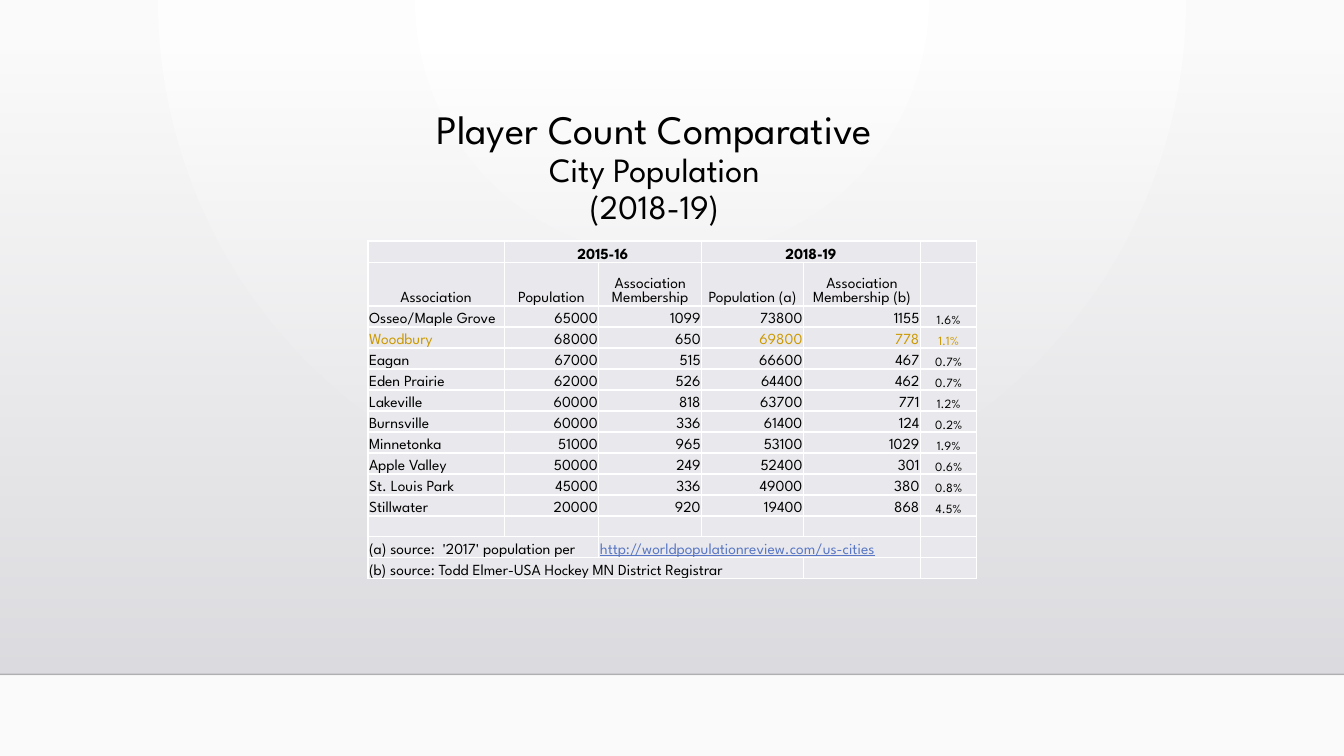
from lxml import etree
from pptx import Presentation
from pptx.dml.color import RGBColor
from pptx.enum.shapes import MSO_CONNECTOR, MSO_SHAPE
from pptx.enum.text import MSO_ANCHOR, MSO_AUTO_SIZE, PP_ALIGN
from pptx.oxml.ns import qn
from pptx.util import Inches, Pt

LEFT, CENTER, RIGHT = PP_ALIGN.LEFT, PP_ALIGN.CENTER, PP_ALIGN.RIGHT
TOP, BOTTOM = MSO_ANCHOR.TOP, MSO_ANCHOR.BOTTOM
RECTANGLE, STRAIGHT = MSO_SHAPE.RECTANGLE, MSO_CONNECTOR.STRAIGHT
NO_AUTOFIT = MSO_AUTO_SIZE.NONE

WIDTH, HEIGHT = Inches(13.33), Inches(7.5)
FLOOR = Inches(6.69)
FONT = "League Spartan"
BODY, SMALL = 11, 9
COLORS = {
    "text": "000000", "highlight": "CC9900", "link": "5977C4",
    "cell": "E9E9ED", "border": "FFFFFF", "floor": "000001",
    "glow": "FFFFFF", "edge": "FAFAFA", "wall_top": "DCDCE0", "wall_bottom": "DEDEE2",
}

COLUMNS = [1.35, 0.94, 1.02, 1.01, 1.16, 0.56]
HEADER_HEIGHTS = [15.5, 31]
ROW_HEIGHT = 15
HEADINGS = ["Association", "Population", "Association Membership",
            "Population (a)", "Association Membership (b)"]
HIGHLIGHTED = "Woodbury"
ASSOCIATIONS = [
    ("Osseo/Maple Grove", 65000, 1099, 73800, 1155, "1.6%"),
    ("Woodbury", 68000, 650, 69800, 778, "1.1%"),
    ("Eagan", 67000, 515, 66600, 467, "0.7%"),
    ("Eden Prairie", 62000, 526, 64400, 462, "0.7%"),
    ("Lakeville", 60000, 818, 63700, 771, "1.2%"),
    ("Burnsville", 60000, 336, 61400, 124, "0.2%"),
    ("Minnetonka", 51000, 965, 53100, 1029, "1.9%"),
    ("Apple Valley", 50000, 249, 52400, 301, "0.6%"),
    ("St. Louis Park", 45000, 336, 49000, 380, "0.8%"),
    ("Stillwater", 20000, 920, 19400, 868, "4.5%"),
]
ALIGNMENTS = [LEFT, RIGHT, RIGHT, RIGHT, RIGHT, CENTER]
FIRST_ROW = len(HEADER_HEIGHTS)
NOTES_ROW = FIRST_ROW + len(ASSOCIATIONS) + 1
ROW_COUNT = NOTES_ROW + 2


def sub(parent, tag, **attrs):
    child = etree.SubElement(parent, qn(tag))
    for name, value in attrs.items():
        child.set(name, str(value))
    return child


def add_color(parent, color, opacity=100):
    clr = sub(parent, "a:srgbClr", val=COLORS[color])
    if opacity < 100:
        sub(clr, "a:alpha", val=opacity * 1000)


def set_gradient(fill, start, end, opacity=100):
    """Fill from start, at the given opacity, to solid end; return the gradient element."""
    fill.gradient()
    grad = fill._fill._gradFill
    for child in list(grad):
        grad.remove(child)
    stops = sub(grad, "a:gsLst")
    add_color(sub(stops, "a:gs", pos=0), start, opacity)
    add_color(sub(stops, "a:gs", pos=100000), end)
    return grad


def add_text(p, text, size=BODY, color="text", bold=False, underline=False, align=LEFT):
    p.alignment = align
    r = p.add_run()
    r.text = text
    font = r.font
    font.name, font.size = FONT, Pt(size)
    font.bold, font.underline = bold, underline
    font.color.rgb = RGBColor.from_string(COLORS[color])


def add_backdrop(s):
    grad = set_gradient(s.background.fill, "glow", "edge")
    sub(sub(grad, "a:path", path="circle"), "a:fillToRect", l=43000, t=0, r=43000, b=100000)

    top = Inches(0.51)
    wall = s.shapes.add_shape(RECTANGLE, 0, top, WIDTH, FLOOR - top)
    wall.shadow.inherit = False
    wall.line.fill.background()
    grad = set_gradient(wall.fill, "wall_top", "wall_bottom", opacity=0)
    sub(grad, "a:lin", ang=90 * 60000, scaled=0)

    line = s.shapes.add_connector(STRAIGHT, 0, FLOOR, WIDTH, FLOOR)
    line.line.width = Pt(1)
    line.line.color.rgb = RGBColor.from_string(COLORS["floor"])
    clr = line._element.spPr.find(".//" + qn("a:srgbClr"))
    sub(clr, "a:alpha", val=20000)
    sub(line._element.spPr, "a:effectLst")


def add_title(s):
    title = s.shapes.title
    s.shapes._spTree.append(title._element)  # in front of the backdrop
    title.left, title.top = Inches(1.24), Inches(1.04)
    title.width, title.height = Inches(10.5), Inches(1.15)
    tf = title.text_frame
    tf.word_wrap, tf.auto_size, tf.vertical_anchor = True, NO_AUTOFIT, TOP
    p = tf.paragraphs[0]
    p.line_spacing = 0.9
    add_text(p, "Player Count Comparative", size=28.8, align=CENTER)
    for text in ("City Population", "(2018-19)"):
        p.add_line_break()
        add_text(p, text, size=24.3, align=CENTER)


def format_cell(cell):
    cell.fill.solid()
    cell.fill.fore_color.rgb = RGBColor.from_string(COLORS["cell"])
    cell.vertical_anchor = BOTTOM
    cell.margin_left = cell.margin_right = cell.margin_top = Inches(0.01)
    cell.margin_bottom = 0
    tcPr = cell._tc.get_or_add_tcPr()
    for i, side in enumerate(("a:lnL", "a:lnR", "a:lnT", "a:lnB")):
        border = sub(tcPr, side, w=Pt(1))
        add_color(sub(border, "a:solidFill"), "border")
        tcPr.insert(i, border)
    # An empty cell must not stretch its row
    cell.text_frame.paragraphs[0]._p.get_or_add_endParaRPr().set("sz", str(BODY * 100))


def fill_cell(table, row, col, text, span=1, **fmt):
    cell = table.cell(row, col)
    if span > 1:
        cell.merge(table.cell(row, col + span - 1))
    add_text(cell.text_frame.paragraphs[0], text, **fmt)


def add_population_table(s):
    heights = HEADER_HEIGHTS + [ROW_HEIGHT] * (ROW_COUNT - FIRST_ROW)
    frame = s.shapes.add_table(ROW_COUNT, len(COLUMNS), Inches(3.65), Inches(2.39),
                               Inches(sum(COLUMNS)), Pt(sum(heights)))
    table = frame.table
    for column, width in zip(table.columns, COLUMNS):
        column.width = Inches(width)
    for row, height in zip(table.rows, heights):
        row.height = Pt(height)
    for cell in table.iter_cells():
        format_cell(cell)

    for col, season in ((1, "2015-16"), (3, "2018-19")):
        fill_cell(table, 0, col, season, span=2, bold=True, align=CENTER)
    for col, heading in enumerate(HEADINGS):
        fill_cell(table, 1, col, heading, align=CENTER)
    for row, values in enumerate(ASSOCIATIONS, FIRST_ROW):
        for col, value in enumerate(values):
            marked = values[0] == HIGHLIGHTED and col not in (1, 2)
            fill_cell(table, row, col, str(value), align=ALIGNMENTS[col],
                      size=SMALL if col == len(COLUMNS) - 1 else BODY,
                      color="highlight" if marked else "text")
    fill_cell(table, NOTES_ROW, 0, "(a) source:  '2017' population per", span=2)
    fill_cell(table, NOTES_ROW, 2, "http://worldpopulationreview.com/us-cities", span=3,
              color="link", underline=True)
    fill_cell(table, NOTES_ROW + 1, 0,
              "(b) source: Todd Elmer-USA Hockey MN District Registrar", span=4)


def main():
    prs = Presentation()
    prs.slide_width, prs.slide_height = WIDTH, HEIGHT
    s = prs.slides.add_slide(prs.slide_layouts.get_by_name("Title Only"))
    add_backdrop(s)
    add_title(s)
    add_population_table(s)
    prs.save("out.pptx")


if __name__ == "__main__":
    main()
